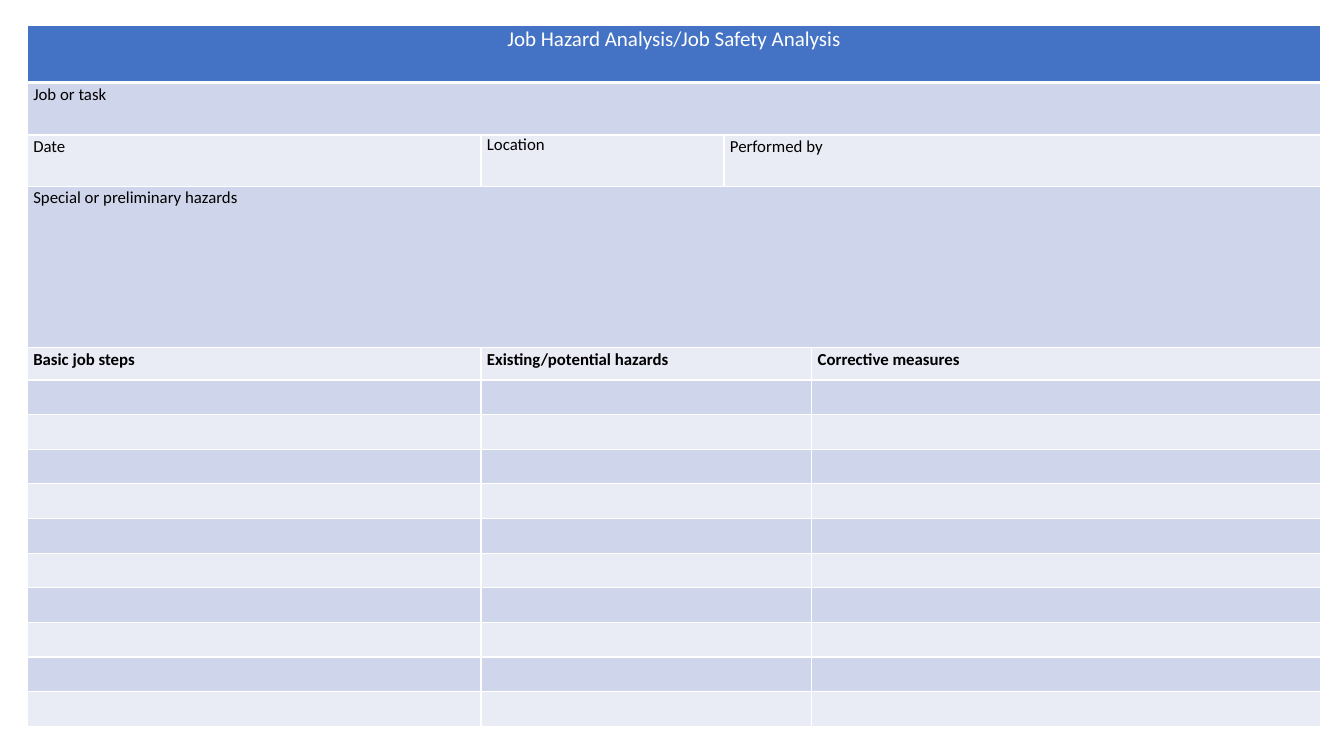
"""Build a one-slide job hazard analysis form."""
from lxml import etree
from pptx import Presentation
from pptx.dml.color import RGBColor
from pptx.enum.text import PP_ALIGN
from pptx.oxml.ns import qn
from pptx.util import Inches, Pt

CENTER, LEFT = PP_ALIGN.CENTER, PP_ALIGN.LEFT
BLANK_LAYOUT = 6

BLANK_STEPS = 10
COLUMNS = [4.5, 2.41, 0.87, 5.05]
ROWS = [0.57, 0.52, 0.51, 1.6, 0.32] + [0.344] * BLANK_STEPS
TABLE_LEFT, TABLE_TOP = 0.27, 0.25
HEADER, DARK_BAND, LIGHT_BAND, WHITE, BLACK = "4472C4", "CFD5EA", "E9EBF5", "FFFFFF", "000000"

FORM = [
    [("Job Hazard Analysis/Job Safety Analysis", 4)],
    [("Job or task", 4)],
    [("Date", 1), ("Location", 1), ("Performed by", 2)],
    [("Special or preliminary hazards", 4)],
    [("Basic job steps", 1), ("Existing/potential hazards", 2), ("Corrective measures", 1)],
] + [[("", 1), ("", 2), ("", 1)]] * BLANK_STEPS
TITLE_ROW, HEADING_ROW = 0, 4
SINGLE_SPACED = {"Location"}

MARGINS = {"margin_left": Inches(0.06), "margin_right": Inches(0.06),
           "margin_top": 0, "margin_bottom": 0}


def color(value):
    return RGBColor.from_string(value)


def apply(target, values):
    for name, value in values.items():
        setattr(target, name, value)


def paint(cell, fill, bottom_width):
    cell.fill.solid()
    cell.fill.fore_color.rgb = color(fill)
    properties = cell._tc.get_or_add_tcPr()
    widths = {"lnL": 1, "lnR": 1, "lnT": 1, "lnB": bottom_width}
    for index, (side, width) in enumerate(widths.items()):
        border = etree.Element(qn("a:" + side), w=str(Pt(width)))
        solid = etree.SubElement(border, qn("a:solidFill"))
        etree.SubElement(solid, qn("a:srgbClr"), val=WHITE)
        properties.insert(index, border)


def write(cell, text, row):
    is_title = row == TITLE_ROW
    para = cell.text_frame.paragraphs[0]
    apply(para, {"alignment": CENTER if is_title else LEFT,
                 "line_spacing": 1.0 if text in SINGLE_SPACED else 1.07})
    span = para.add_run()
    span.text = text
    apply(span.font, {"name": "Calibri", "size": Pt(15 if is_title else 12),
                      "bold": row == HEADING_ROW})
    span.font.color.rgb = color(WHITE if is_title else BLACK)


def main():
    deck = Presentation()
    apply(deck, {"slide_width": Inches(13.33), "slide_height": Inches(7.5)})
    page = deck.slides.add_slide(deck.slide_layouts[BLANK_LAYOUT])
    box = page.shapes.add_table(
        len(ROWS), len(COLUMNS), Inches(TABLE_LEFT), Inches(TABLE_TOP),
        Inches(sum(COLUMNS)), Inches(sum(ROWS)))
    table = box.table
    for column, width in zip(table.columns, COLUMNS):
        column.width = Inches(width)
    for line, height in zip(table.rows, ROWS):
        line.height = Inches(height)

    for row, entries in enumerate(FORM):
        is_title = row == TITLE_ROW
        fill = HEADER if is_title else DARK_BAND if row % 2 else LIGHT_BAND
        for cell in table.rows[row].cells:
            apply(cell, MARGINS)
            paint(cell, fill, 3 if is_title else 1)
        start = 0
        for text, width in entries:
            cell = table.cell(row, start)
            if width > 1:
                cell.merge(table.cell(row, start + width - 1))
            if text:
                write(cell, text, row)
            start += width
    deck.save("out.pptx")


if __name__ == "__main__":
    main()
